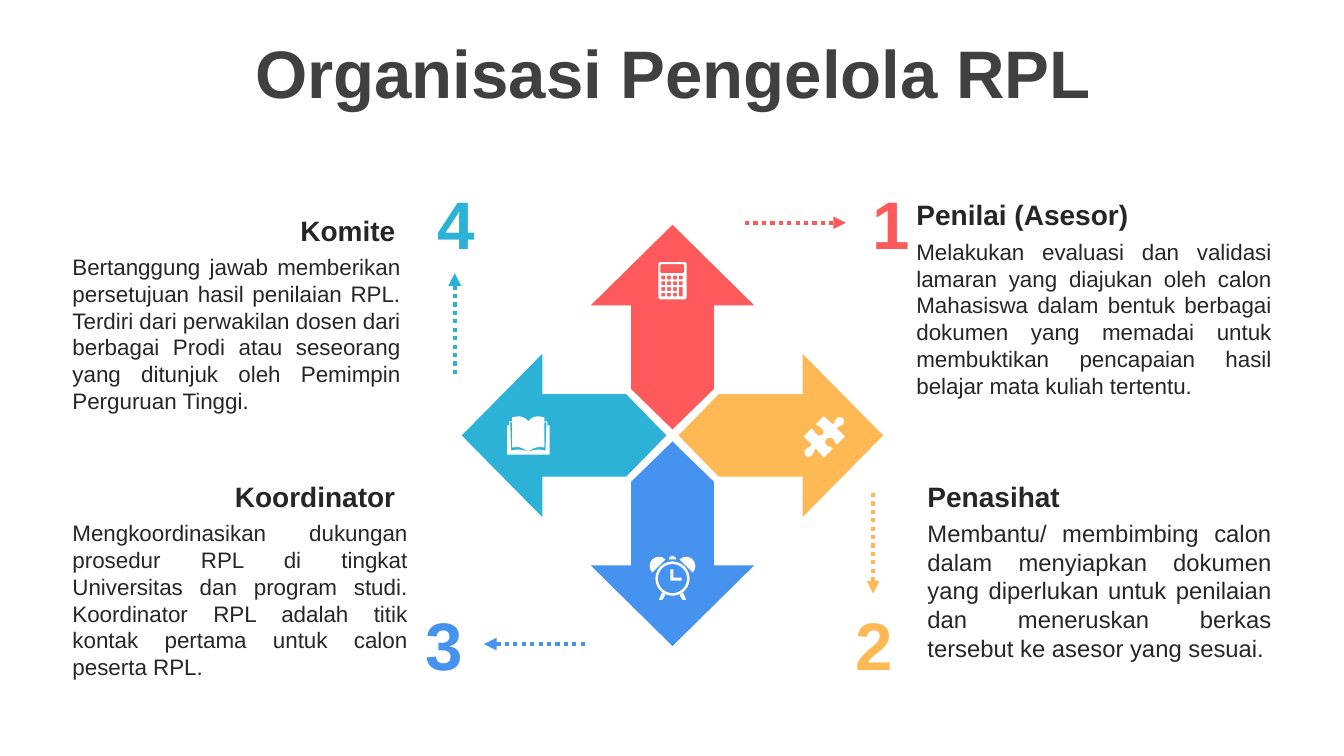
import math
from dataclasses import dataclass

from lxml import etree
from pptx import Presentation
from pptx import util as u
from pptx.dml.color import RGBColor
from pptx.enum import dml, shapes, text
from pptx.oxml import ns

PX = 9144
FINE = 100
CENTER_X, CENTER_Y = 667, 432


@dataclass(frozen=True)
class Theme:
    font: str = "Arial"
    title_color: str = "404040"
    ink: str = "262626"
    icon: str = "FFFFFF"
    red: str = "FE5A5B"
    amber: str = "FFB954"
    blue: str = "4592EF"
    teal: str = "2CB2D7"
    display_size: int = 48
    heading_size: int = 20
    body_size: int = 16
    large_body_size: int = 17
    line_width: int = 3


THEME = Theme()
ALIGN = text.PP_ALIGN
ANCHOR = text.MSO_ANCHOR

ROLES = [
    ("1", THEME.red, (839, 181), ((739, 221), (839, 221)),
     "Penilai (Asesor)", (899, 191, 372, 44), ALIGN.LEFT,
     "Melakukan evaluasi dan validasi lamaran yang diajukan oleh calon Mahasiswa "
     "dalam bentuk berbagai dokumen yang memadai untuk membuktikan pencapaian "
     "hasil belajar mata kuliah tertentu.",
     (899, 231, 372, 172), THEME.body_size),
    ("2", THEME.amber, (822, 599), ((866, 489), (866, 589)),
     "Penasihat", (910, 470, 361, 44), ALIGN.LEFT,
     "Membantu/ membimbing calon dalam menyiapkan dokumen yang diperlukan untuk "
     "penilaian dan meneruskan berkas tersebut ke asesor yang sesuai.",
     (910, 510, 361, 153), THEME.large_body_size),
    ("3", THEME.blue, (396, 599), ((580, 639), (480, 639)),
     "Koordinator", (88, 470, 314, 44), ALIGN.RIGHT,
     "Mengkoordinasikan dukungan prosedur RPL di tingkat Universitas dan program "
     "studi. Koordinator RPL adalah titik kontak pertama untuk calon peserta RPL.",
     (62, 510, 352, 172), THEME.body_size),
    ("4", THEME.teal, (407, 181), ((451, 371), (451, 271)),
     "Komite", (88, 206, 314, 44), ALIGN.RIGHT,
     "Bertanggung jawab memberikan persetujuan hasil penilaian RPL. Terdiri dari "
     "perwakilan dosen dari berbagai Prodi atau seseorang yang ditunjuk oleh "
     "Pemimpin Perguruan Tinggi.",
     (62, 246, 345, 172), THEME.body_size),
]

UP_ARROW = [(0, -209), (81, -129), (41, -129), (41, -46), (0, -6),
            (-41, -46), (-41, -129), (-81, -129)]

PUZZLE = [
    (836, 415), (837, 416, 838, 419, 836, 421), (834, 423, 832, 422, 830, 425),
    (838, 433), (830, 441), (827, 439, 828, 437, 826, 435),
    (824, 434, 821, 434, 820, 435), (818, 437, 818, 440, 820, 442),
    (823, 444, 823, 442, 826, 445), (817, 454), (809, 445),
    (806, 448, 808, 449, 805, 452), (803, 454, 800, 453, 799, 452),
    (798, 450, 797, 448, 799, 446), (801, 443, 803, 445, 805, 441),
    (797, 433), (805, 425), (808, 427, 807, 429, 810, 431),
    (812, 433, 814, 432, 816, 431), (817, 430, 818, 427, 815, 425),
    (813, 422, 812, 424, 809, 421), (817, 413), (826, 421),
    (829, 419, 827, 418, 830, 415), (832, 413, 835, 414, 836, 415),
]

BOOK_HALF = [
    (524, 448), (531, 446, 534, 445, 541, 447), (542, 419), (540, 419),
    (540, 444), (535, 442, 529, 444, 524, 448), (524, 418),
    (527, 414, 530, 413, 534, 413), (540, 414), (540, 418), (543, 418),
    (543, 422), (545, 422), (545, 451), (524, 451),
]


def set_values(target, values):
    for name, value in values.items():
        setattr(target, name, value)


def set_text(shape, content, size, color, bold=False, align=ALIGN.LEFT,
             frame_values=None, paragraph_values=None):
    frame = shape.text_frame
    set_values(frame, {"word_wrap": True, **(frame_values or {})})
    paragraph = frame.paragraphs[0]
    set_values(paragraph, {"alignment": align, **(paragraph_values or {})})
    run = paragraph.add_run()
    run.text = content
    set_values(run.font, {"name": THEME.font, "size": u.Pt(size), "bold": bold})
    run.font.color.rgb = RGBColor.from_string(color)


def add_text(slide, box, content, size, color, **options):
    shape = slide.shapes.add_textbox(*(value * PX for value in box))
    set_text(shape, content, size, color, **options)


def add_outline(slide, contours, color):
    fine = [[(x * FINE, y * FINE) for x, y in contour] for contour in contours]
    builder = slide.shapes.build_freeform(*fine[0][0], scale=PX / FINE)
    for number, contour in enumerate(fine):
        if number:
            builder.move_to(*contour[0])
        builder.add_line_segments(contour[1:], close=True)
    shape = builder.convert_to_shape()
    shape.shadow.inherit = False
    shape.fill.solid()
    shape.fill.fore_color.rgb = RGBColor.from_string(color)
    shape.line.fill.background()


def add_dotted_arrow(slide, start, end, color):
    points = [value * PX for value in (*start, *end)]
    connector = slide.shapes.add_connector(shapes.MSO_CONNECTOR.STRAIGHT, *points)
    line = connector.line
    line.color.rgb = RGBColor.from_string(color)
    set_values(line, {"width": u.Pt(THEME.line_width),
                      "dash_style": dml.MSO_LINE.ROUND_DOT})
    properties = connector._element.spPr
    etree.SubElement(properties.find(ns.qn("a:ln")), ns.qn("a:tailEnd"), type="triangle")
    etree.SubElement(properties, ns.qn("a:effectLst"))


def arc(x, y, radius, start, end, steps):
    angles = [math.radians(start + (end - start) * i / steps) for i in range(steps + 1)]
    return [(x + radius * math.cos(a), y + radius * math.sin(a)) for a in angles]


def circle(x, y, radius):
    return arc(x, y, radius, 0, 345, 23)


def box_outline(left, top, right, bottom):
    return [(left, top), (right, top), (right, bottom), (left, bottom)]


def cut_box(left, top, right, bottom, cut):
    return [(left + cut, top), (right - cut, top), (right, top + cut), (right, bottom - cut),
            (right - cut, bottom), (left + cut, bottom), (left, bottom - cut), (left, top + cut)]


def trace(segments, steps=3):
    points = [segments[0]]
    for segment in segments[1:]:
        if len(segment) == 2:
            points.append(segment)
            continue
        controls = [points[-1], segment[:2], segment[2:4], segment[4:]]
        for i in range(1, steps + 1):
            t = i / steps
            weights = [(1 - t) ** 3, 3 * t * (1 - t) ** 2, 3 * t * t * (1 - t), t ** 3]
            points.append(tuple(sum(w * c[axis] for w, c in zip(weights, controls))
                                for axis in (0, 1)))
    return points


def mirror(contour, axis):
    return [(2 * axis - x, y) for x, y in contour]


def clock_contours():
    bell = arc(653.5, 561.5, 9.2, 135, 315, 8)
    foot = [(656.5, 588), (653.5, 595), (657, 595), (660, 590.2)]
    hands = [(665, 565), (668, 565), (668, 573), (676, 573), (676, 576), (665, 576)]
    return [circle(667, 574, 17), circle(667, 574, 14.5), hands,
            arc(667, 555, 3.6, 180, 360, 5), bell, mirror(bell, 667), foot, mirror(foot, 667)]


def calculator_contours():
    contours = [cut_box(653, 260, 681, 297, 1.5), cut_box(655, 262, 678.5, 271, 1)]
    for column in range(4):
        for row in range(4):
            if (column, row) == (3, 3):
                continue
            left, top = 656 + 5.8 * column, 273.4 + 5.7 * row
            height = 9.4 if (column, row) == (3, 2) else 3.7
            contours.append(box_outline(left, top, left + 3.7, top + height))
    return contours


def main():
    presentation = Presentation()
    set_values(presentation, {"slide_width": 1333 * PX, "slide_height": 750 * PX})
    slide = presentation.slides.add_slide(presentation.slide_layouts[5])

    title = slide.shapes.title
    set_values(title, {"left": 35 * PX, "top": 37 * PX, "width": 1266 * PX, "height": 79 * PX})
    set_text(title, "Organisasi Pengelola RPL", THEME.display_size, THEME.title_color,
             bold=True, align=ALIGN.CENTER,
             frame_values={"vertical_anchor": ANCHOR.MIDDLE,
                           "auto_size": text.MSO_AUTO_SIZE.NONE},
             paragraph_values={"line_spacing": 0.9, "space_before": u.Pt(10)})

    grow = {"auto_size": text.MSO_AUTO_SIZE.SHAPE_TO_FIT_TEXT}
    number_frame = {**grow, "margin_left": 5 * PX, "margin_right": 3 * PX,
                    "margin_top": 0, "margin_bottom": 0}
    heading_frame = {**grow, "vertical_anchor": ANCHOR.MIDDLE}
    outline = UP_ARROW
    for (number, color, number_at, pointer, heading, heading_box, align,
         body, body_box, body_size) in ROLES:
        add_outline(slide, [[(CENTER_X + x, CENTER_Y + y) for x, y in outline]], color)
        outline = [(-y, x) for x, y in outline]
        add_dotted_arrow(slide, *pointer, color)
        add_text(slide, (*number_at, 88, 81), number, THEME.display_size, color,
                 bold=True, align=ALIGN.CENTER, frame_values=number_frame)
        add_text(slide, heading_box, heading, THEME.heading_size, THEME.ink,
                 bold=True, align=align, frame_values=heading_frame)
        add_text(slide, body_box, body, body_size, THEME.ink,
                 align=ALIGN.JUSTIFY, frame_values=grow)

    page = trace(BOOK_HALF)
    for contours in (clock_contours(), calculator_contours(), [trace(PUZZLE)],
                     [page, mirror(page, 524)]):
        add_outline(slide, contours, THEME.icon)

    presentation.save("out.pptx")


if __name__ == "__main__":
    main()
